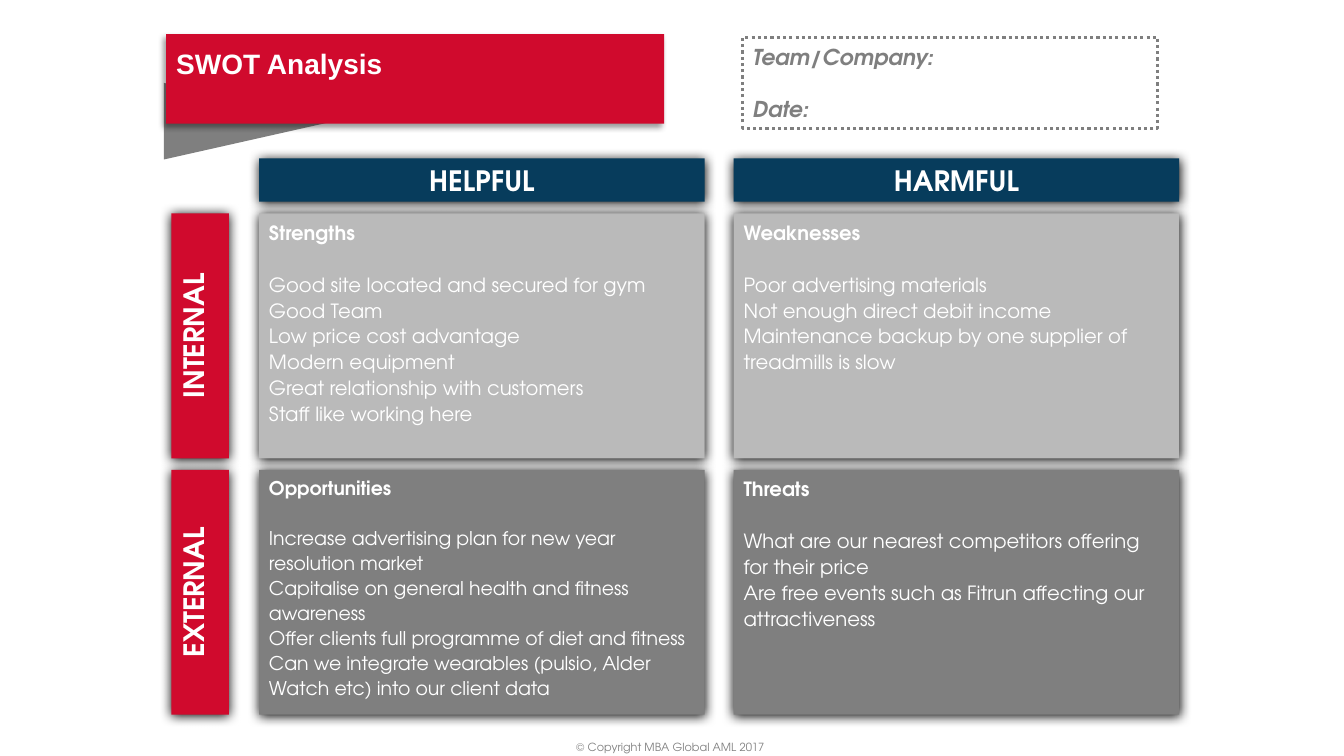
from dataclasses import dataclass

from lxml.etree import SubElement
from pptx import Presentation
from pptx.dml.color import RGBColor
from pptx.enum.dml import MSO_LINE
from pptx.enum.shapes import MSO_SHAPE
from pptx.enum.text import MSO_ANCHOR, PP_ALIGN
from pptx.oxml.ns import qn
from pptx.util import Cm, Pt

FONT = "TeX Gyre Adventor"
RED, NAVY, LIGHT, GREY, WHITE = "D00A2D", "073C5C", "BABABA", "7F7F7F", "FFFFFF"

# Grid in centimetres
COLS, ROWS = (6.53, 18.49), (5.38, 11.84)
CELL_W, CELL_H = 11.23, 6.17
HEAD_Y, HEAD_H = 3.99, 1.09
SIDE_X, SIDE_W = 4.32, 1.45


@dataclass
class Shade:
    alpha: int
    blur: float
    dist: float
    angle: int


@dataclass
class Panel:
    col: int
    row: int
    fill: str
    title: str
    items: list[str]
    size: float = 14


SOFT = Shade(100, 8.5, 1, 90)
SLANT = Shade(40, 4, 3, 135)

PANELS = [
    Panel(0, 0, LIGHT, "Strengths", [
        "Good site located and secured for gym",
        "Good Team",
        "Low price cost advantage",
        "Modern equipment",
        "Great relationship with customers",
        "Staff like working here"]),
    Panel(1, 0, LIGHT, "Weaknesses", [
        "Poor advertising materials",
        "Not enough direct debit income",
        "Maintenance backup by one supplier of treadmills is slow"]),
    Panel(0, 1, GREY, "Opportunities", [
        "Increase advertising plan for new year resolution market",
        "Capitalise on general health and fitness awareness",
        "Offer clients full programme of diet and fitness",
        "Can we integrate wearables (pulsio, Alder Watch etc) into our client data"],
        13.5),
    Panel(1, 1, GREY, "Threats", [
        "What are our nearest competitors offering for their price",
        "Are free events such as Fitrun affecting our attractiveness"]),
]


def color(code: str) -> RGBColor:
    return RGBColor.from_string(code)


def write(shape, text: str, *, size: float = 20, hue: str = WHITE,
          font: str = FONT, bold: bool = True, slant: bool = False,
          align=PP_ALIGN.LEFT, space: float = 1, gap: float = 0) -> None:
    """Add one paragraph, reusing the first while it is empty."""
    frame = shape.text_frame
    para = frame.paragraphs[0] if not frame.text else frame.add_paragraph()
    para.alignment, para.line_spacing = align, space
    if gap:
        para.space_before = Pt(gap)
    run = para.add_run()
    run.text = text
    face = run.font
    face.name, face.size, face.bold, face.italic = font, Pt(size), bold, slant
    face.color.rgb = color(hue)


def shadow(shape, shade: Shade) -> None:
    effects = shape._element.spPr.find(qn("a:effectLst"))
    outer = SubElement(effects, qn("a:outerShdw"), {
        "blurRad": str(Pt(shade.blur)), "dist": str(Pt(shade.dist)),
        "dir": str(shade.angle * 60000), "algn": "ctr", "rotWithShape": "0"})
    black = SubElement(outer, qn("a:srgbClr"), val="000000")
    SubElement(black, qn("a:alpha"), val=str(shade.alpha * 1000))


def block(slide, x: float, y: float, w: float, h: float,
          fill: str | None = None, shade: Shade | None = None,
          kind=MSO_SHAPE.RECTANGLE, anchor=MSO_ANCHOR.TOP):
    shape = slide.shapes.add_shape(kind, Cm(x), Cm(y), Cm(w), Cm(h))
    shape.shadow.inherit = False
    shape.line.fill.background()
    if fill:
        shape.fill.solid()
        shape.fill.fore_color.rgb = color(fill)
    else:
        shape.fill.background()
    if shade:
        shadow(shape, shade)
    shape.text_frame.word_wrap = True
    shape.text_frame.vertical_anchor = anchor
    return shape


def panel(slide, part: Panel) -> None:
    box = block(slide, COLS[part.col], ROWS[part.row], CELL_W, CELL_H,
                part.fill, SOFT)
    write(box, part.title, size=part.size, space=1.1)
    for i, item in enumerate(part.items):
        write(box, item, size=part.size, bold=False, space=1.1,
              gap=0 if i else round(part.size * 1.32, 1))


def main() -> None:
    deck = Presentation()
    deck.slide_width, deck.slide_height = Cm(33.87), Cm(19.05)
    slide = deck.slides.add_slide(deck.slide_layouts[6])

    # Row labels, panels and column heads
    for y, label in zip(ROWS, ("INTERNAL", "EXTERNAL")):
        side = block(slide, SIDE_X, y, SIDE_W, CELL_H, RED, SOFT)
        side.text_frame._txBody.bodyPr.set("vert", "vert270")
        write(side, label, align=PP_ALIGN.CENTER)
    for part in PANELS:
        panel(slide, part)
    for x, label in zip(COLS, ("HELPFUL", "HARMFUL")):
        head = block(slide, x, HEAD_Y, CELL_W, HEAD_H, NAVY, SOFT)
        write(head, label, align=PP_ALIGN.CENTER)

    # Title ribbon with its fold
    fold = block(slide, 5.31, 0.91, 1.93, 4.29, GREY,
                 kind=MSO_SHAPE.FLOWCHART_EXTRACT)
    fold.rotation = 90
    title = block(slide, 4.19, 0.86, 12.55, 2.26, RED, SLANT)
    title.text_frame.margin_top = Cm(0.32)
    write(title, "SWOT Analysis", font="Arial")

    # Team and date box
    team = block(slide, 18.72, 0.94, 10.46, 2.29, anchor=MSO_ANCHOR.MIDDLE)
    team.line.color.rgb = color(GREY)
    team.line.width = Pt(2.25)
    team.line.dash_style = MSO_LINE.ROUND_DOT
    write(team, "Team/Company:", size=15.6, hue=GREY, slant=True)
    write(team, "Date:", size=15.6, hue=GREY, slant=True, gap=19)

    # Copyright line
    foot = slide.shapes.add_textbox(Cm(14.27), Cm(18.52), Cm(5.33), Cm(0.61))
    foot.text_frame.word_wrap = False
    write(foot, "© Copyright MBA Global AML 2017", size=8, hue="808080",
          bold=False)

    deck.save("out.pptx")


if __name__ == "__main__":
    main()
